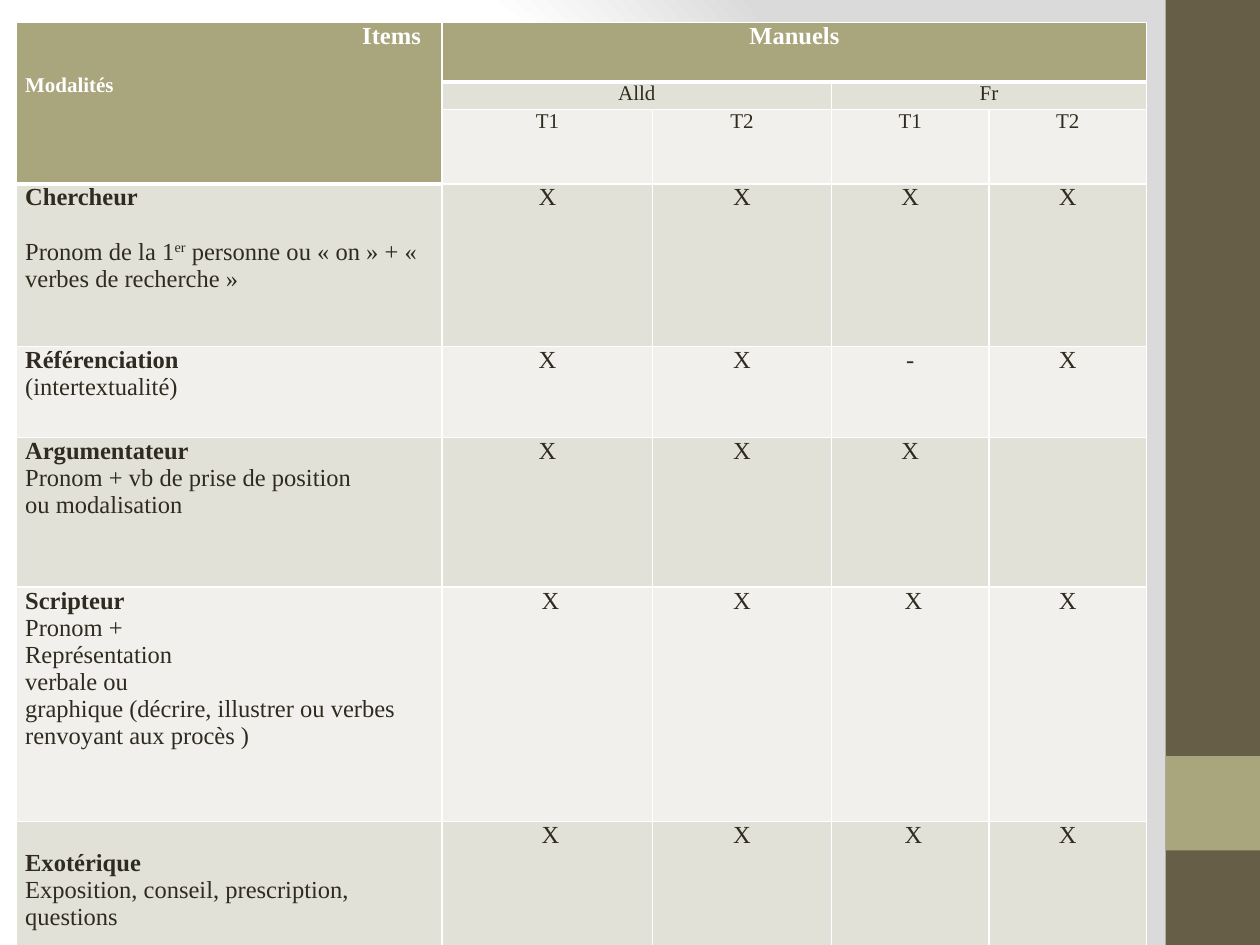
from pptx import Presentation
from pptx.dml.color import RGBColor
from pptx.enum.shapes import MSO_SHAPE
from pptx.enum.text import PP_ALIGN
from pptx.oxml import parse_xml
from pptx.oxml.ns import nsdecls
from pptx.util import Inches, Pt

FONT = "Times New Roman"
WHITE = RGBColor(0xFF, 0xFF, 0xFF)
INK = RGBColor(0x2F, 0x2B, 0x20)
BROWN = RGBColor(0x67, 0x5E, 0x47)
OLIVE = RGBColor(0xA9, 0xA5, 0x7C)
BAND_DARK = RGBColor(0xE2, 0xE1, 0xD7)
BAND_LIGHT = RGBColor(0xF1, 0xF0, 0xEC)

COLUMN_WIDTHS = [3.38, 1.67, 1.42, 1.25, 1.25]
ROW_HEIGHTS = [0.47, 0.22, 0.58, 1.29, 0.72, 1.19, 1.86, 1.14]
SIDEBAR = [(0, 7.5, BROWN), (6, 0.75, OLIVE)]
MERGES = [((0, 0), (2, 0)), ((0, 1), (0, 4)), ((1, 1), (1, 2)), ((1, 3), (1, 4))]
LANGUAGES = [(1, "Alld"), (3, "Fr")]
TERMS = ["T1", "T2", "T1", "T2"]
ROLES = [
    ("Chercheur", [["Pronom de la 1", "er", " personne ou « on » + « verbes de recherche »"]],
     ["X", "X", "X", "X"]),
    ("Référenciation", [["(intertextualité)"]], ["X", "X", "-", "X"]),
    ("Argumentateur", [["Pronom + vb de prise de position"], ["ou modalisation"]],
     ["X", "X", "X", ""]),
    ("Scripteur", [["Pronom +"], ["Représentation"], ["verbale ou"],
                   ["graphique (décrire, illustrer ou verbes renvoyant aux procès )"]],
     ["X", "X", "X", "X"]),
    ("Exotérique", [["Exposition, conseil, prescription, questions"]], ["X", "X", "X", "X"]),
]
FIRST_ROLE_ROW = 3

BACKGROUND = f"""<p:bg {nsdecls('p', 'a')}><p:bgPr><a:gradFill rotWithShape="1"><a:gsLst>
<a:gs pos="0"><a:srgbClr val="FFFFFF"/></a:gs><a:gs pos="75000"><a:srgbClr val="FFFFFF"/></a:gs>
<a:gs pos="100000"><a:srgbClr val="DADADA"/></a:gs></a:gsLst><a:path path="circle">
<a:fillToRect l="20000" t="50000" r="100000" b="50000"/></a:path></a:gradFill>
<a:effectLst/></p:bgPr></p:bg>"""


def add_line(paragraph, parts, size, color=INK, bold=False, align=PP_ALIGN.LEFT):
    paragraph.alignment = align
    for part in parts:
        run = paragraph.add_run()
        run.text = part
        run.font.name = FONT
        run.font.size = Pt(size)
        run.font.bold = bold
        run.font.color.rgb = color
        if part == "er":
            run.font._element.set("baseline", "30000")


def add_centered(cell, text, size, color=INK, bold=False):
    add_line(cell.text_frame.paragraphs[0], [text], size, color, bold, PP_ALIGN.CENTER)


def add_borders(cell, widths):
    for index, (side, width) in enumerate(widths.items()):
        cell._tc.get_or_add_tcPr().insert(index, parse_xml(
            f'<a:ln{side} {nsdecls("a")} w="{Pt(width)}"><a:solidFill>'
            f'<a:srgbClr val="{WHITE}"/></a:solidFill></a:ln{side}>'))


def style_cells(table):
    for row in range(len(ROW_HEIGHTS)):
        for column in range(len(COLUMN_WIDTHS)):
            cell = table.cell(row, column)
            cell.margin_left = cell.margin_right = Inches(0.07)
            cell.margin_top = cell.margin_bottom = 0
            header = row == 0 or (column == 0 and row < FIRST_ROLE_ROW)
            cell.fill.solid()
            cell.fill.fore_color.rgb = OLIVE if header else (BAND_LIGHT, BAND_DARK)[row % 2]
            widths = {"L": 1, "R": 1}
            if row == 0:
                widths["T"] = 1
            widths["B"] = 3 if header else 1
            add_borders(cell, widths)


def fill_header(table):
    corner = table.cell(0, 0)
    corner.margin_right = Inches(0.17)
    add_line(corner.text_frame.paragraphs[0], ["Items"], 14, WHITE, True, PP_ALIGN.RIGHT)
    modes = corner.text_frame.add_paragraph()
    modes.space_before = Pt(13.8)
    add_line(modes, ["Modalités"], 12, WHITE, True)
    add_centered(table.cell(0, 1), "Manuels", 14, WHITE, True)
    for column, language in LANGUAGES:
        add_centered(table.cell(1, column), language, 12)
    for column, term in enumerate(TERMS, 1):
        add_centered(table.cell(2, column), term, 12)


def fill_roles(table):
    for row, (role, lines, marks) in enumerate(ROLES, FIRST_ROLE_ROW):
        cell = table.cell(row, 0)
        add_line(cell.text_frame.paragraphs[0], [role], 14, bold=True)
        for parts in lines:
            paragraph = cell.text_frame.add_paragraph()
            add_line(paragraph, parts, 14)
            if role == "Chercheur":
                paragraph.space_before = Pt(15.5)
        if role == "Exotérique":
            cell.margin_top = Inches(0.22)
        for column, mark in enumerate(marks, 1):
            if mark:
                add_centered(table.cell(row, column), mark, 14)
            if role in ("Scripteur", "Exotérique") and column in (1, 3):
                table.cell(row, column).margin_left = Inches(0.12)


def main():
    presentation = Presentation()
    presentation.slide_width = Inches(10)
    presentation.slide_height = Inches(7.5)
    slide = presentation.slides.add_slide(presentation.slide_layouts[6])
    slide._element.cSld.insert(0, parse_xml(BACKGROUND))

    for top, height, color in SIDEBAR:
        bar = slide.shapes.add_shape(
            MSO_SHAPE.RECTANGLE, Inches(9.25), Inches(top), Inches(0.75), Inches(height))
        bar.shadow.inherit = False
        bar.fill.solid()
        bar.fill.fore_color.rgb = color
        bar.line.fill.background()

    table = slide.shapes.add_table(
        len(ROW_HEIGHTS), len(COLUMN_WIDTHS), Inches(0.13), Inches(0.18),
        Inches(sum(COLUMN_WIDTHS)), Inches(sum(ROW_HEIGHTS))).table
    table.first_row = table.horz_banding = False
    for column, width in zip(table.columns, COLUMN_WIDTHS):
        column.width = Inches(width)
    for row, height in zip(table.rows, ROW_HEIGHTS):
        row.height = Inches(height)
    style_cells(table)
    for start, end in MERGES:
        table.cell(*start).merge(table.cell(*end))
    fill_header(table)
    fill_roles(table)
    presentation.save("out.pptx")


if __name__ == "__main__":
    main()
